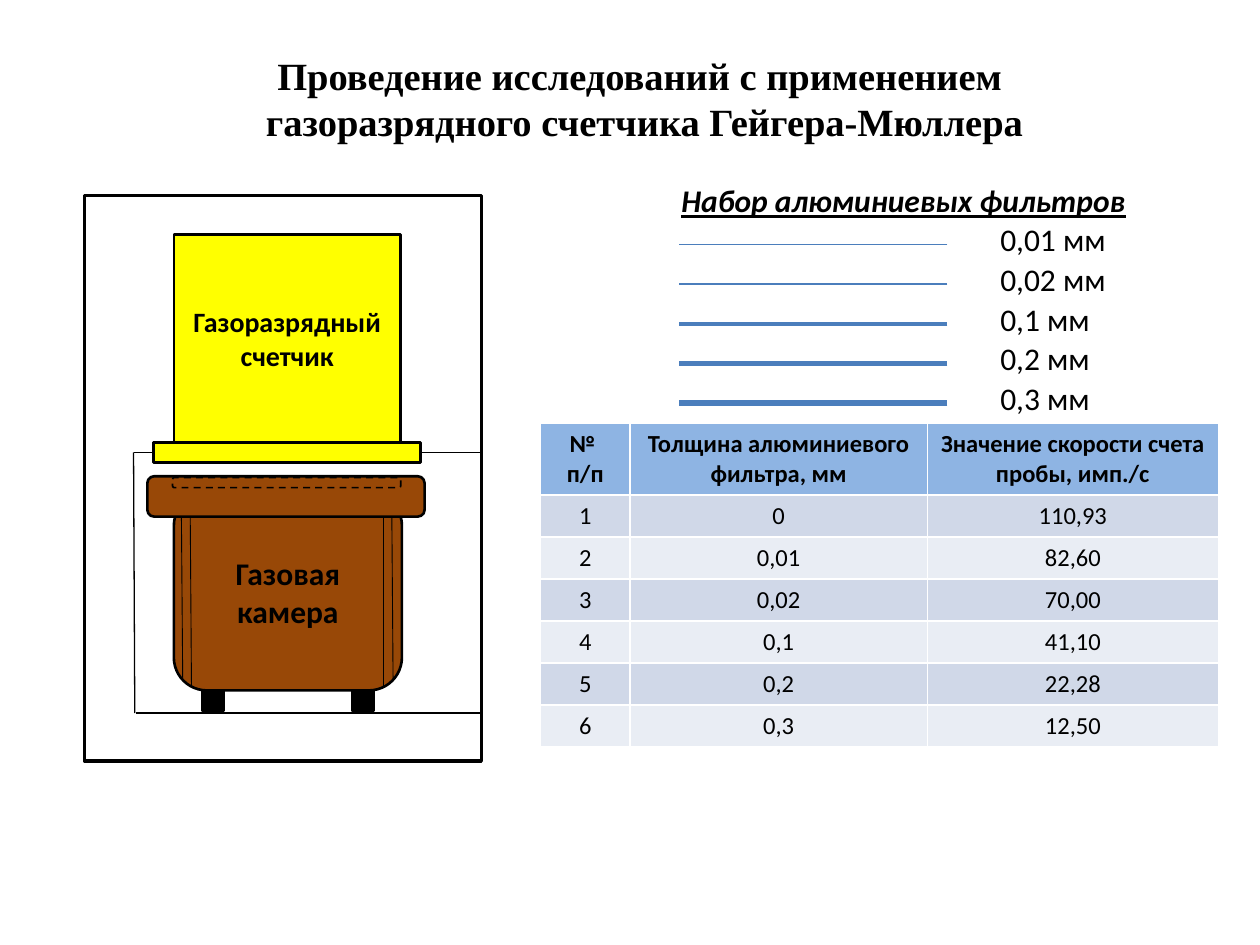
from typing import NamedTuple, Optional

from lxml.etree import SubElement
from pptx import Presentation
from pptx.dml.color import RGBColor
from pptx.enum.dml import MSO_LINE
from pptx.enum.shapes import MSO_CONNECTOR, MSO_SHAPE
from pptx.enum.text import MSO_ANCHOR as Anchor, MSO_AUTO_SIZE, PP_ALIGN as Align
from pptx.oxml.ns import qn
from pptx.util import Inches, Pt

BLACK = RGBColor(0x00, 0x00, 0x00)
BROWN = RGBColor(0x98, 0x48, 0x07)
YELLOW = RGBColor(0xFF, 0xFF, 0x00)
FILTER_BLUE = RGBColor(0x4B, 0x7E, 0xBC)
HEADER_BLUE = RGBColor(0x8E, 0xB4, 0xE3)
BAND_DARK = RGBColor(0xD0, 0xD8, 0xE8)
BAND_LIGHT = RGBColor(0xE9, 0xED, 0xF4)
RECT, ROUND = MSO_SHAPE.RECTANGLE, MSO_SHAPE.ROUNDED_RECTANGLE


class Part(NamedTuple):
    left: float
    top: float
    width: float
    height: float
    fill: Optional[RGBColor] = None
    line: float = 1.5
    preset: MSO_SHAPE = RECT
    text: str = ""
    size: float = 18
    dashed: bool = False


class Line(NamedTuple):
    x1: float
    y1: float
    x2: float
    y2: float
    width: float = 0.75
    color: RGBColor = BLACK


class Filter(NamedTuple):
    label: str
    line: float


def add_text(paragraph, text: str, size: float, bold: bool = False,
             font: str = "Calibri", align: Align = Align.CENTER):
    paragraph.alignment = align
    run = paragraph.add_run()
    run.text = text
    run.font.name, run.font.size, run.font.bold = font, Pt(size), bold
    run.font.color.rgb = BLACK
    return run


def draw_part(shapes, part: Part):
    shape = shapes.add_shape(part.preset, Inches(part.left), Inches(part.top),
                             Inches(part.width), Inches(part.height))
    shape.shadow.inherit = False
    if part.fill is None:
        shape.fill.background()
    else:
        shape.fill.solid()
        shape.fill.fore_color.rgb = part.fill
    shape.line.color.rgb = BLACK
    shape.line.width = Pt(part.line)
    if part.dashed:
        shape.line.dash_style = MSO_LINE.DASH
    if part.text:
        shape.text_frame.vertical_anchor = Anchor.MIDDLE
        add_text(shape.text_frame.paragraphs[0], part.text, part.size, bold=True)
    return shape


def draw_line(shapes, line: Line):
    connector = shapes.add_connector(
        MSO_CONNECTOR.STRAIGHT, Inches(line.x1), Inches(line.y1),
        Inches(line.x2), Inches(line.y2))
    connector.line.color.rgb = line.color
    connector.line.width = Pt(line.width)
    properties = connector.element.find(qn("p:spPr"))
    SubElement(properties, qn("a:effectLst"))
    return connector


def draw_label(shapes, left: float, top: float, width: float, text: str,
               bold: bool = False):
    box = shapes.add_textbox(Inches(left), Inches(top), Inches(width), Inches(0.4))
    box.text_frame.word_wrap = False
    box.text_frame.auto_size = MSO_AUTO_SIZE.SHAPE_TO_FIT_TEXT
    return add_text(box.text_frame.paragraphs[0], text, 18, bold, align=Align.LEFT)


def fill_cell(cell, lines: list[str], color: RGBColor, header: bool) -> None:
    cell.fill.solid()
    cell.fill.fore_color.rgb = color
    cell.vertical_anchor = Anchor.MIDDLE if header else Anchor.TOP
    frame = cell.text_frame
    for i, text in enumerate(lines):
        paragraph = frame.add_paragraph() if i else frame.paragraphs[0]
        add_text(paragraph, text, 14, bold=header)


def draw_title(title) -> None:
    title.left, title.top = Inches(0.51), Inches(0.36)
    title.width, title.height = Inches(9.21), Inches(0.84)
    frame = title.text_frame
    frame.word_wrap = True
    frame.auto_size = MSO_AUTO_SIZE.NONE
    frame.vertical_anchor = Anchor.TOP
    for paragraph, text in (
            (frame.paragraphs[0], "Проведение исследований с применением "),
            (frame.add_paragraph(), "газоразрядного счетчика Гейгера-Мюллера")):
        add_text(paragraph, text, 22, True, "Times New Roman")


def draw_apparatus(shapes) -> None:
    # Gas chamber with its lid, ribs and feet
    draw_part(shapes, Part(1.38, 3.91, 1.81, 1.57, BROWN, preset=ROUND,
                           text="Газовая камера"))
    draw_part(shapes, Part(1.17, 3.78, 2.2, 0.32, BROWN, preset=ROUND))
    draw_part(shapes, Part(1.37, 3.79, 1.81, 0.08, line=1, preset=ROUND, dashed=True))
    for top_x, bottom_x, bottom in ((3.04, 3.04, 5.45), (3.11, 3.12, 5.39),
                                    (1.44, 1.45, 5.38), (1.51, 1.52, 5.45)):
        draw_line(shapes, Line(top_x, 4.1, bottom_x, bottom, 0.5))
    for left in (1.61, 2.8):
        draw_part(shapes, Part(left, 5.48, 0.16, 0.16, BLACK, 2))

    # Counter on its flange, and the frame around everything
    flange = draw_part(shapes, Part(1.22, 3.51, 2.12, 0.16, YELLOW))
    draw_part(shapes, Part(1.38, 1.86, 1.8, 1.65, YELLOW,
                           text="Газоразрядный счетчик", size=16))
    draw_part(shapes, Part(0.67, 1.55, 3.15, 4.49, line=2))

    # Outline of the stand
    draw_line(shapes, Line(3.83, 5.66, 1.08, 5.66))
    draw_line(shapes, Line(1.06, 3.59, 1.07, 5.66))
    draw_line(shapes, Line(1.22, 3.59, 1.06, 3.59)).begin_connect(flange, 1)
    draw_line(shapes, Line(3.81, 3.59, 3.34, 3.59)).end_connect(flange, 3)


def draw_filters(shapes) -> None:
    heading = draw_label(shapes, 5.31, 1.39, 3.77, "Набор алюминиевых фильтров", True)
    heading.font.italic = heading.font.underline = True
    filters = [Filter("0,01 мм", 0.75), Filter("0,02 мм", 1), Filter("0,1 мм", 2),
               Filter("0,2 мм", 2.5), Filter("0,3 мм", 3.75)]
    pitch = (3.2 - 1.94) / (len(filters) - 1)
    for i, item in enumerate(filters):
        y = 1.94 + i * pitch
        draw_line(shapes, Line(7.52, y, 5.39, y, item.line, FILTER_BLUE))
        draw_label(shapes, 7.84, y - 0.24, 1.05, item.label)


def draw_results(shapes) -> None:
    header = [["№ ", "п/п"], ["Толщина алюминиевого фильтра, мм"],
              ["Значение скорости счета пробы, имп./с"]]
    readings = [("0", "110,93"), ("0,01", "82,60"), ("0,02", "70,00"),
                ("0,1", "41,10"), ("0,2", "22,28"), ("0,3", "12,50")]
    rows = [header] + [[[str(n)], [thickness], [rate]]
                       for n, (thickness, rate) in enumerate(readings, 1)]
    table = shapes.add_table(len(rows), len(header), Inches(4.29), Inches(3.36),
                             Inches(5.38), Inches(2.57)).table
    for column, width in zip(table.columns, (0.71, 2.36, 2.31)):
        column.width = Inches(width)
    for r, row in enumerate(rows):
        table.rows[r].height = Inches(0.33 if r else 0.56)
        band = BAND_DARK if r % 2 else BAND_LIGHT
        for c, lines in enumerate(row):
            fill_cell(table.cell(r, c), lines, band if r else HEADER_BLUE, r == 0)


def main() -> None:
    presentation = Presentation()
    presentation.slide_width, presentation.slide_height = Inches(10), Inches(7.5)
    slide = presentation.slides.add_slide(presentation.slide_layouts[5])
    draw_title(slide.shapes.title)
    draw_apparatus(slide.shapes)
    draw_filters(slide.shapes)
    draw_results(slide.shapes)
    presentation.save("out.pptx")


if __name__ == "__main__":
    main()
